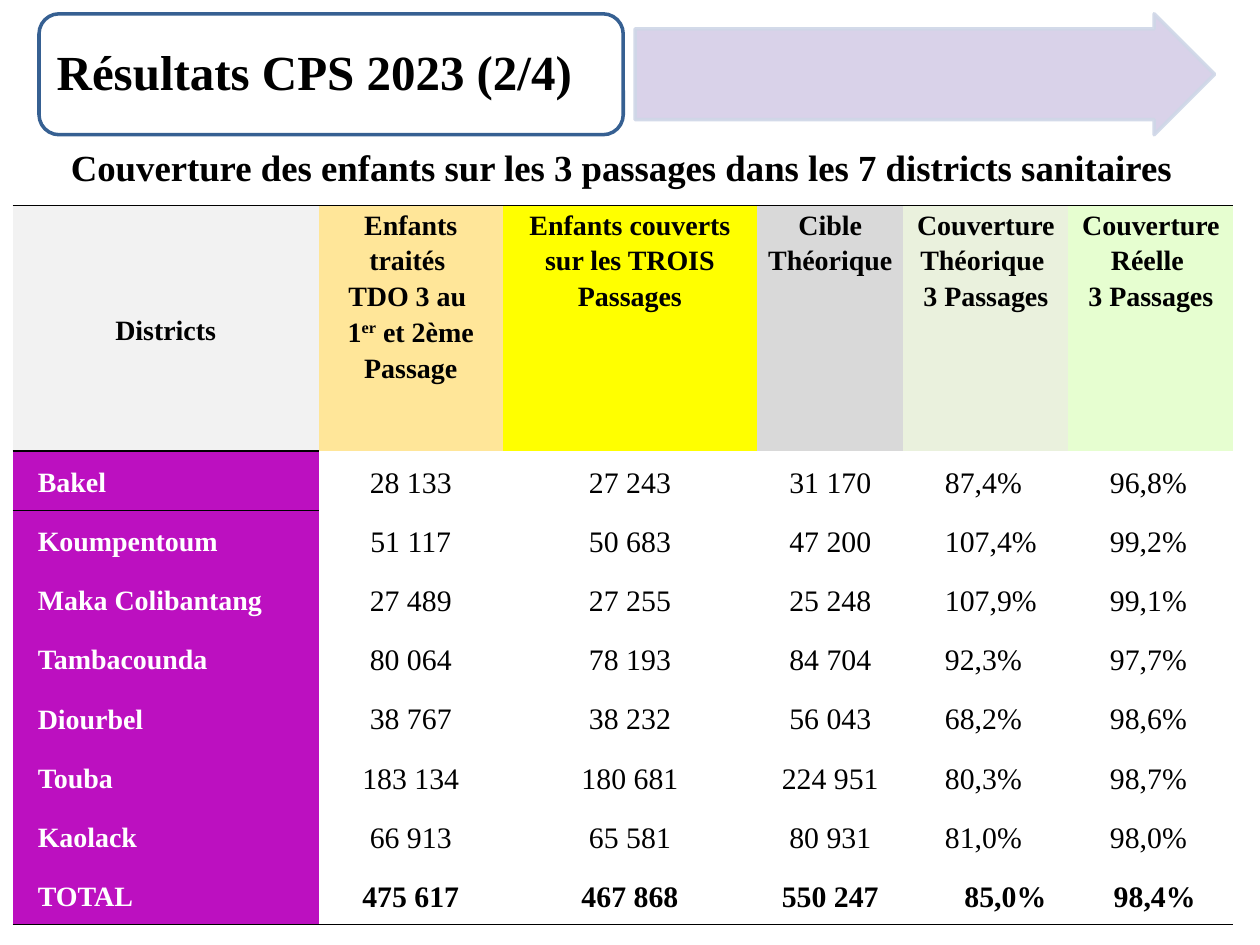
from collections import namedtuple

from lxml import etree
from pptx import Presentation
from pptx.dml.color import RGBColor
from pptx.enum.shapes import MSO_SHAPE as Shape
from pptx.enum.text import MSO_ANCHOR as Anchor, PP_ALIGN as Align
from pptx.oxml.ns import qn
from pptx.util import Inches, Pt

Box = namedtuple("Box", "left top width height")

FONT = "Times New Roman"
BLACK = RGBColor(0x00, 0x00, 0x00)
WHITE = RGBColor(0xFF, 0xFF, 0xFF)
BLUE = RGBColor(0x36, 0x60, 0x92)
LILAC = RGBColor(0xD9, 0xD2, 0xE9)
PALE_BLUE = RGBColor(0xCF, 0xD7, 0xE7)
PURPLE = RGBColor(0xBC, 0x10, 0xC0)
HEADER_FILLS = [
    RGBColor(0xF2, 0xF2, 0xF2), RGBColor(0xFF, 0xE6, 0x99), RGBColor(0xFF, 0xFF, 0x00),
    RGBColor(0xD9, 0xD9, 0xD9), RGBColor(0xEA, 0xF1, 0xDD), RGBColor(0xE6, 0xFE, 0xD0),
]
PLAIN_STYLE = "{2D5ABB26-0587-4C30-8999-92F81FD0307C}"

# Each header is a list of paragraphs; "^" encloses superscript text
HEADERS = [
    ["Districts"],
    ["Enfants traités ", "TDO 3 au ", "1^er^ et 2ème Passage"],
    ["Enfants couverts sur les TROIS Passages"],
    ["Cible Théorique"],
    ["Couverture Théorique ", "3 Passages"],
    ["Couverture Réelle ", "3 Passages"],
]
ROWS = [
    ["Bakel", "28 133", "27 243", "31 170", "87,4%", "96,8%"],
    ["Koumpentoum", "51 117", "50 683", "47 200", "107,4%", "99,2%"],
    ["Maka Colibantang", "27 489", "27 255", "25 248", "107,9%", "99,1%"],
    ["Tambacounda", "80 064", "78 193", "84 704", "92,3%", "97,7%"],
    ["Diourbel", "38 767", "38 232", "56 043", "68,2%", "98,6%"],
    ["Touba", "183 134", "180 681", "224 951", "80,3%", "98,7%"],
    ["Kaolack", "66 913", "65 581", "80 931", "81,0%", "98,0%"],
    ["TOTAL", "475 617", "467 868", "550 247", "85,0%", "98,4%"],
]
COLUMN_WIDTHS = [2.43, 1.46, 2.02, 1.16, 1.31, 1.31]
HEADER_HEIGHT = 1.95


def emu(box):
    return [Inches(length) for length in box]


def write(frame, paragraphs, size=16, color=BLACK, bold=True, align=Align.LEFT,
          spacing=1.0, after=0, indent=0):
    for index, text in enumerate(paragraphs):
        paragraph = frame.paragraphs[0] if index == 0 else frame.add_paragraph()
        paragraph.alignment = align
        paragraph.line_spacing = spacing
        paragraph.space_before, paragraph.space_after = Pt(0), Pt(after)
        if indent:
            properties = paragraph._p.get_or_add_pPr()
            properties.set("marL", "0")
            properties.set("indent", str(Inches(indent)))
        for part, piece in enumerate(text.split("^")):
            run = paragraph.add_run()
            run.text = piece
            font = run.font
            font.name, font.size, font.bold = FONT, Pt(size), bold
            font.color.rgb = color
            if part % 2:
                font._element.set("baseline", "30000")


def add_panel(slide, kind, box, fill, line):
    shape = slide.shapes.add_shape(kind, *emu(box))
    shape.shadow.inherit = False
    shape.fill.solid()
    shape.fill.fore_color.rgb = fill
    shape.line.color.rgb = line
    shape.line.width = Pt(2)
    return shape


def add_banner(slide, box):
    # Arrow on the right half
    arrow_box = Box(box.left + box.width * 0.507, box.top, box.width * 0.493, box.height)
    arrow = add_panel(slide, Shape.RIGHT_ARROW, arrow_box, LILAC, PALE_BLUE)
    arrow.adjustments[0], arrow.adjustments[1] = 0.75, 0.5
    line_color = arrow.line._ln.find(".//" + qn("a:srgbClr"))
    etree.SubElement(line_color, qn("a:alpha"), val="89000")

    # Rounded frame on the left half, with the title in front
    frame_box = box._replace(width=box.width * 0.497)
    add_panel(slide, Shape.ROUNDED_RECTANGLE, frame_box, WHITE, BLUE)
    title = slide.shapes.title
    title.element.getparent().append(title.element)
    title.left, title.top, title.width, title.height = emu(
        Box(box.left + 0.06, box.top + 0.05, frame_box.width, box.height - 0.09))
    frame = title.text_frame
    frame.word_wrap = True
    frame.vertical_anchor = Anchor.MIDDLE
    frame.margin_left = frame.margin_right = Inches(0.08)
    frame.margin_top = frame.margin_bottom = Inches(0.04)
    write(frame, ["Résultats CPS 2023 (2/4)"], size=28, spacing=0.9)


def add_subtitle(slide, box):
    frame = slide.shapes.add_textbox(*emu(box)).text_frame
    frame.word_wrap = True
    write(frame, ["Couverture des enfants sur les 3 passages dans les 7 districts sanitaires "],
          size=21, align=Align.CENTER)


def add_borders(cell, sides):
    properties = cell._tc.get_or_add_tcPr()
    for index, side in enumerate(sides):
        line = etree.Element(qn("a:ln" + side), w=str(Pt(1)))
        fill = etree.SubElement(line, qn("a:solidFill"))
        etree.SubElement(fill, qn("a:srgbClr"), val=str(BLACK))
        properties.insert(index, line)


def format_cell(cell, fill, anchor=Anchor.MIDDLE, borders=""):
    cell.margin_left = cell.margin_right = Inches(0.05)
    cell.margin_top = cell.margin_bottom = 0
    cell.vertical_anchor = anchor
    cell.fill.solid()
    cell.fill.fore_color.rgb = fill
    add_borders(cell, borders)


def add_coverage_table(slide, box):
    table = slide.shapes.add_table(len(ROWS) + 1, len(HEADERS), *emu(box)).table
    table.first_row = table.horz_banding = False
    table._tbl.tblPr.find(qn("a:tableStyleId")).text = PLAIN_STYLE
    for column, width in zip(table.columns, COLUMN_WIDTHS):
        column.width = Inches(width)
    for row in table.rows:
        row.height = Inches((box.height - HEADER_HEIGHT) / len(ROWS))
    table.rows[0].height = Inches(HEADER_HEIGHT)

    # Header row
    for column, (paragraphs, fill) in enumerate(zip(HEADERS, HEADER_FILLS)):
        cell = table.cell(0, column)
        first = column == 0
        format_cell(cell, fill, Anchor.MIDDLE if first else Anchor.TOP, "TB" if first else "T")
        write(cell.text_frame, paragraphs, align=Align.CENTER, spacing=1.15)

    # District rows, then the total
    for row, values in enumerate(ROWS, start=1):
        total = row == len(ROWS)
        for column, text in enumerate(values):
            cell = table.cell(row, column)
            borders = "B" if total else "T" if row == 1 and column == 0 else ""
            format_cell(cell, WHITE if column else PURPLE, borders=borders)
            if column == 0:
                write(cell.text_frame, [text], color=WHITE, spacing=1.15, indent=0.15)
                continue
            percent = column >= 4
            centered = not percent or (total and column == 4)
            write(cell.text_frame, [text], size=17, bold=total, spacing=1.15, after=10,
                  align=Align.CENTER if centered else Align.LEFT,
                  indent=(0.31 if total else 0.28) if percent else 0)


def main():
    presentation = Presentation()
    presentation.slide_width, presentation.slide_height = Inches(10), Inches(7.5)
    slide = presentation.slides.add_slide(presentation.slide_layouts.get_by_name("Title Only"))
    add_banner(slide, Box(0.31, 0.11, 9.33, 0.96))
    add_coverage_table(slide, Box(0.1, 1.63, sum(COLUMN_WIDTHS), 5.71))
    add_subtitle(slide, Box(0.12, 1.1, 9.7, 0.45))
    presentation.save("out.pptx")


if __name__ == "__main__":
    main()
